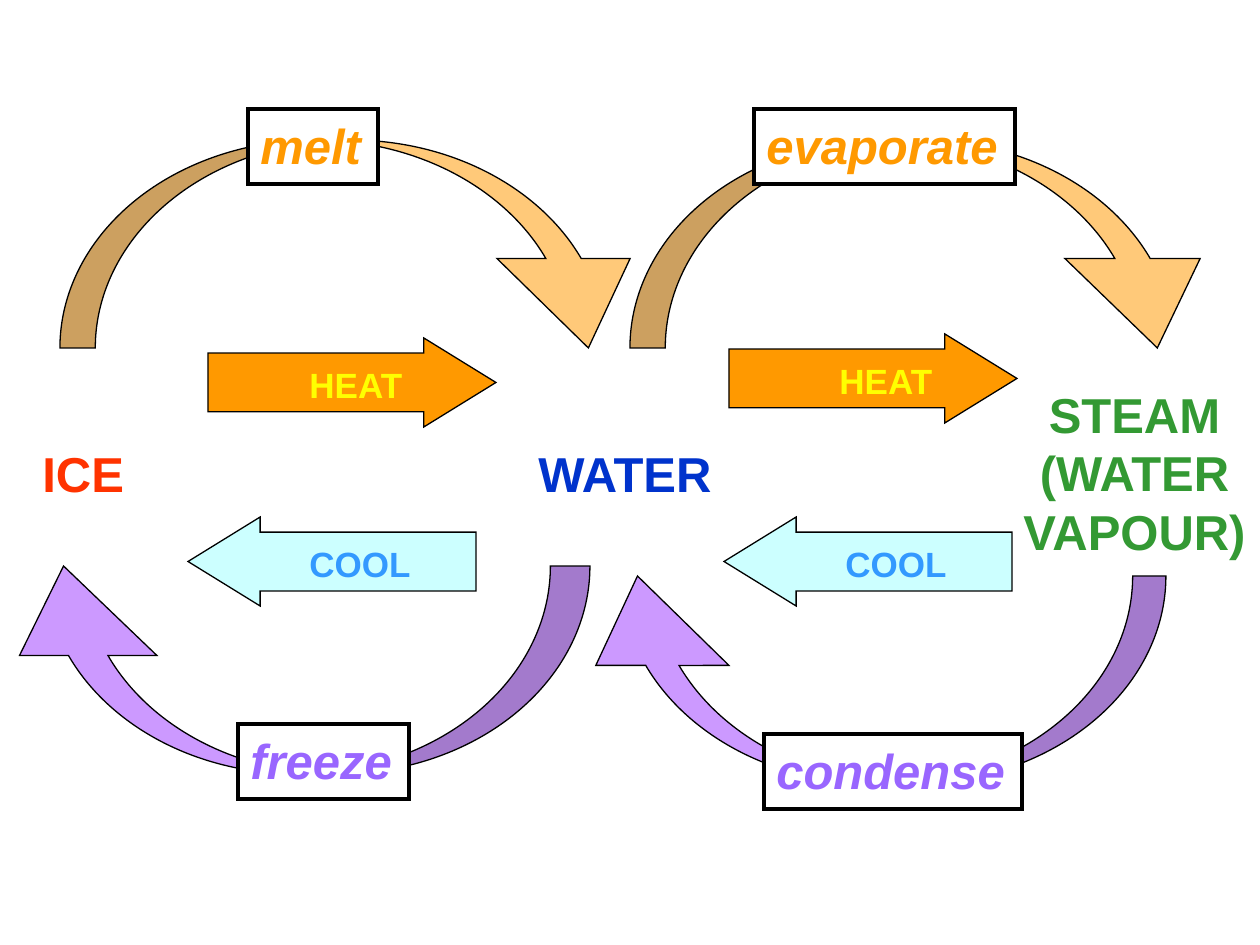
from lxml.etree import SubElement
from pptx import Presentation
from pptx.dml.color import RGBColor
from pptx.enum.shapes import MSO_SHAPE
from pptx.enum.text import MSO_AUTO_SIZE, PP_ALIGN
from pptx.oxml.ns import qn
from pptx.util import Pt

PX = 914400 / 126
BLACK = RGBColor(0x00, 0x00, 0x00)
WHITE = RGBColor(0xFF, 0xFF, 0xFF)
RED = RGBColor(0xFF, 0x33, 0x00)
GREEN = RGBColor(0x33, 0x99, 0x33)
BLUE = RGBColor(0x00, 0x33, 0xCC)
ORANGE = RGBColor(0xFF, 0x99, 0x00)
PEACH = RGBColor(0xFF, 0xC9, 0x79)
YELLOW = RGBColor(0xFF, 0xFF, 0x00)
PALE_CYAN = RGBColor(0xCC, 0xFF, 0xFF)
SKY = RGBColor(0x33, 0x99, 0xFF)
LILAC = RGBColor(0xCC, 0x99, 0xFF)
VIOLET = RGBColor(0x99, 0x66, 0xFF)


def emu(*lengths):
    """Turn lengths in px into EMU."""
    return [round(length * PX) for length in lengths]


def paint(shape, fill, width):
    """Give a shape a solid fill and a black outline with sharp corners."""
    shape.fill.solid()
    shape.fill.fore_color.rgb = fill
    shape.line.color.rgb = BLACK
    shape.line.width = Pt(width)
    outline = shape.element.spPr.find(qn("a:ln"))
    SubElement(outline, qn("a:miter"), lim="800000")


def add_text(shapes, box, text, color, size=28, italic=False, align=PP_ALIGN.LEFT):
    """Place bold text in a box, one paragraph for each line."""
    label = shapes.add_textbox(*emu(*box))
    frame = label.text_frame
    frame.word_wrap = False
    frame.auto_size = MSO_AUTO_SIZE.SHAPE_TO_FIT_TEXT
    frame.text = text
    for para in frame.paragraphs:
        para.alignment = align
        font = para.runs[0].font
        font.name = "Arial"
        font.size = Pt(size)
        font.bold = True
        font.italic = italic
        font.color.rgb = color
    return label


def add_arrow(shapes, kind, box, fill, adjustments):
    """Place an outlined arrow with the given adjustments."""
    arrow = shapes.add_shape(kind, *emu(*box))
    arrow.shadow.inherit = False
    paint(arrow, fill, 0.75)
    for index, value in enumerate(adjustments):
        arrow.adjustments[index] = value
    return arrow


def add_energy(page, left, top, text, fill, color, indent, rotation=0):
    """Draw a labelled straight arrow for heating or cooling."""
    shapes = page.shapes.add_group_shape().shapes
    arrow = add_arrow(shapes, MSO_SHAPE.RIGHT_ARROW, (left, top, 288, 89), fill, (0.66, 0.81))
    arrow.rotation = rotation
    add_text(shapes, (left + indent, top + 19, 130, 54), text, color, size=20)


def add_change(page, left, top, text, label_box, fill, color, flip, bend):
    """Draw a curved arrow with the framed name of the change of state."""
    shapes = page.shapes.add_group_shape().shapes
    arrow = add_arrow(shapes, MSO_SHAPE.CURVED_UP_ARROW, (left, top, 595, 208), fill,
                      (*bend, 0.43))
    arrow.element.spPr.xfrm.set(flip, "1")
    indent, drop, width = label_box
    label = add_text(shapes, (left + indent, top + drop, width, 75), text, color, italic=True)
    paint(label, WHITE, 2)


def add_states(page):
    """Name the three states of water across the middle."""
    add_text(page.shapes, (30, 437, 107, 72), "ICE", RED)
    add_text(page.shapes, (1009, 378, 251, 189), "STEAM\n(WATER\nVAPOUR)", GREEN,
             align=PP_ALIGN.CENTER)
    add_text(page.shapes, (526, 437, 205, 72), "WATER", BLUE)


def main():
    """Build the diagram of changes of state."""
    deck = Presentation()
    deck.slide_width, deck.slide_height = emu(1260, 945)
    page = deck.slides.add_slide(deck.slide_layouts[6])
    add_states(page)
    for left, top, indent in ((208, 338, 89), (729, 334, 98)):
        add_energy(page, left, top, "HEAT", ORANGE, YELLOW, indent)
    for left in (188, 724):
        add_energy(page, left, 517, "COOL", PALE_CYAN, SKY, 109, rotation=180)
    cooling = {"fill": LILAC, "color": VIOLET, "flip": "flipH"}
    heating = {"fill": PEACH, "color": ORANGE, "flip": "flipV"}
    add_change(page, 571, 576, "condense", (193, 158, 258), bend=(0.16, 0.64), **cooling)
    add_change(page, -5, 566, "freeze", (243, 158, 171), bend=(0.19, 0.66), **cooling)
    add_change(page, 60, 140, "melt", (188, -31, 130), bend=(0.17, 0.64), **heating)
    add_change(page, 630, 140, "evaporate", (124, -31, 261), bend=(0.17, 0.65), **heating)
    deck.save("out.pptx")


if __name__ == "__main__":
    main()
